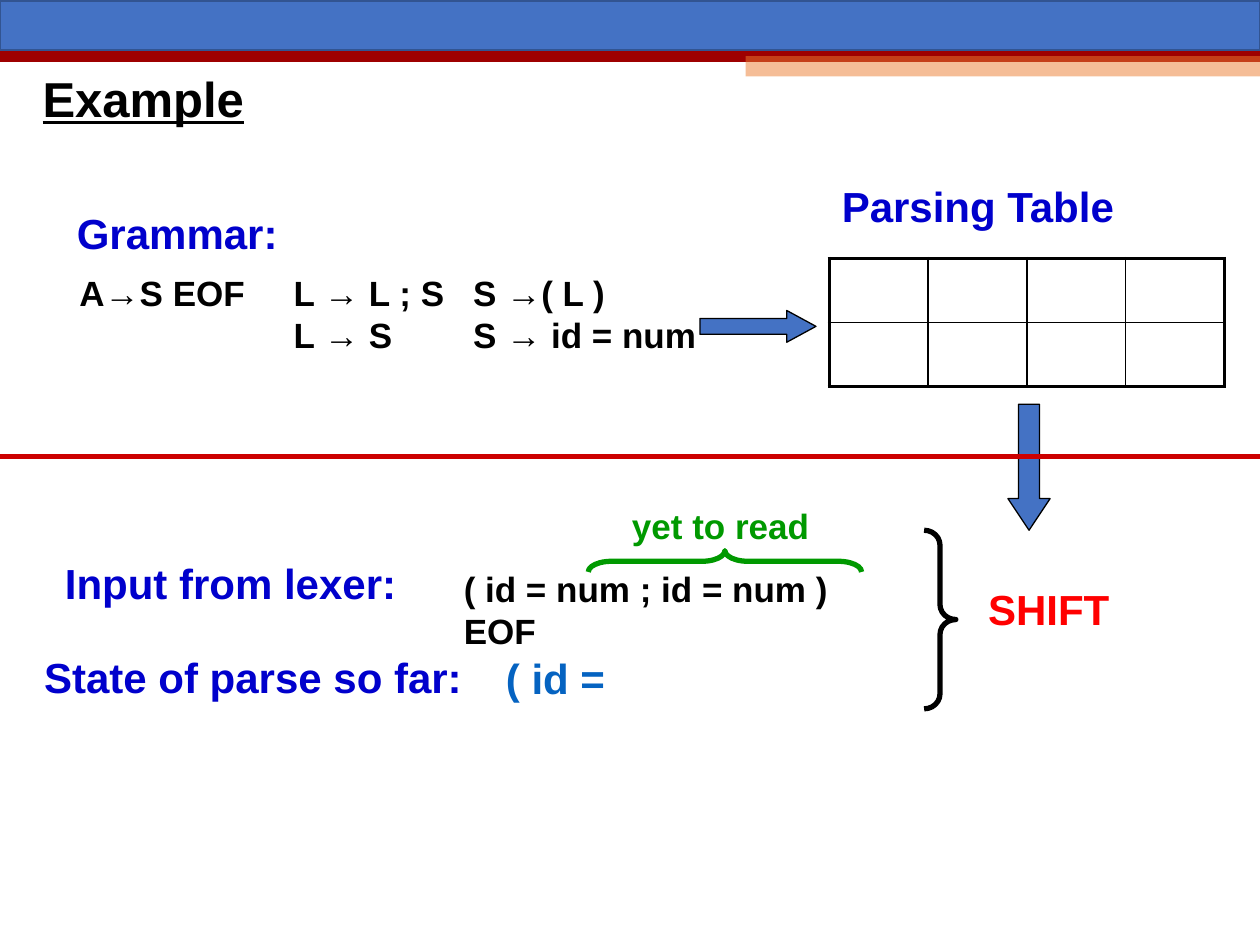
from dataclasses import dataclass

from lxml import etree
from pptx import Presentation
from pptx.dml.color import RGBColor
from pptx.enum.shapes import MSO_CONNECTOR, MSO_SHAPE
from pptx.enum.text import MSO_ANCHOR, MSO_AUTO_SIZE, PP_ALIGN
from pptx.oxml.ns import qn
from pptx.shapes.autoshape import Shape
from pptx.slide import Slide
from pptx.util import Cm, Pt

STRAIGHT = MSO_CONNECTOR.STRAIGHT
RECTANGLE = MSO_SHAPE.RECTANGLE
RIGHT_ARROW = MSO_SHAPE.RIGHT_ARROW
DOWN_ARROW = MSO_SHAPE.DOWN_ARROW
RIGHT_BRACE = MSO_SHAPE.RIGHT_BRACE
TOP = MSO_ANCHOR.TOP
MIDDLE = MSO_ANCHOR.MIDDLE
GROW = MSO_AUTO_SIZE.SHAPE_TO_FIT_TEXT
FIXED = MSO_AUTO_SIZE.NONE
LEFT = PP_ALIGN.LEFT


@dataclass(frozen=True)
class Theme:
    font: str = "Arial"
    title_size: int = 28
    heading_size: int = 24
    body_size: int = 20
    black: str = "000000"
    heading: str = "0000CC"
    parsed: str = "0563C1"
    unread: str = "009900"
    action: str = "FF0000"
    divider: str = "CC0000"
    band: str = "4472C4"
    band_edge: str = "325491"
    header_rule: str = "9E0000"
    accent: str = "ED7D31"


THEME = Theme()
SLIDE_WIDTH = 25.4
SLIDE_HEIGHT = 19.05


@dataclass(frozen=True)
class Box:
    left: float
    top: float
    width: float
    height: float

    def lengths(self) -> tuple[Cm, Cm, Cm, Cm]:
        return Cm(self.left), Cm(self.top), Cm(self.width), Cm(self.height)


@dataclass(frozen=True)
class Label:
    lines: tuple[str, ...]
    box: Box
    size: int = THEME.heading_size
    color: str = THEME.heading
    wrap: bool = False


@dataclass(frozen=True)
class Figure:
    kind: MSO_SHAPE
    box: Box
    fill: str | None = None
    line: str | None = None
    line_width: float = 0.75
    adjustments: tuple[float, ...] = ()
    rotation: float = 0


TITLE = Label(("Example",), Box(0.61, 1.14, 22.86, 1.8),
              THEME.title_size, THEME.black, True)

GRAMMAR_TOP = 5.34
LABELS = (
    Label(("A→S EOF",), Box(1.35, GRAMMAR_TOP, 3.89, 1.12), THEME.body_size, THEME.black),
    Label(("L → L ; S", "L → S"), Box(5.67, GRAMMAR_TOP, 3.56, 1.96),
          THEME.body_size, THEME.black),
    Label(("S →( L )", "S → id = num"), Box(9.29, GRAMMAR_TOP, 5.16, 1.96),
          THEME.body_size, THEME.black),
    Label(("Grammar:",), Box(1.3, 4.06, 4.57, 1.27)),
    Label(("Parsing Table",), Box(16.72, 3.52, 6.07, 1.27)),
    Label(("State of parse so far:",), Box(0.64, 13, 8.94, 1.27)),
    Label(("( id = num ; id = num ) EOF",), Box(9.1, 11.32, 8.8, 1.96),
          THEME.body_size, THEME.black, True),
    Label(("Input from lexer:",), Box(1.06, 11.11, 7.19, 1.27)),
    Label(("( id =",), Box(9.95, 13.03, 2.69, 1.27), color=THEME.parsed),
    Label(("yet to read",), Box(12.49, 10.05, 4.8, 1.09), THEME.body_size, THEME.unread, True),
    Label(("SHIFT",), Box(19.67, 11.63, 2.95, 1.27), color=THEME.action),
)

HEADER_BAND = Figure(RECTANGLE, Box(0, 0.02, SLIDE_WIDTH, 0.99),
                     THEME.band, THEME.band_edge, 1)
HEADER_ACCENT = Figure(RECTANGLE, Box(15.03, 1.13, 10.37, 0.41), THEME.accent)
FIGURES = (
    Figure(RIGHT_ARROW, Box(14.11, 6.26, 2.34, 0.64), THEME.band, THEME.black,
           adjustments=(0.5, 0.92)),
    Figure(RIGHT_BRACE, Box(14.4, 8.56, 0.43, 5.51), None, THEME.unread, 3,
           (1.08, 0.5), 270),
    Figure(RIGHT_BRACE, Box(18.63, 10.69, 0.64, 3.6), None, THEME.black, 3, (0.47, 0.5)),
    Figure(DOWN_ARROW, Box(20.32, 8.15, 0.85, 2.54), THEME.band, THEME.black,
           adjustments=(0.5, 0.75)),
)

TABLE_BOX = Box(16.72, 5.21, 7.96, 2.58)
TABLE_ROWS = 2
TABLE_COLUMNS = 4
OUTER_BORDER = 2.25
INNER_BORDER = 1


def draw_figure(slide: Slide, figure: Figure) -> Shape:
    shape = slide.shapes.add_shape(figure.kind, *figure.box.lengths())
    shape.shadow.inherit = False
    shape.rotation = figure.rotation
    for index, value in enumerate(figure.adjustments):
        shape.adjustments[index] = value
    if figure.fill:
        shape.fill.solid()
        shape.fill.fore_color.rgb = RGBColor.from_string(figure.fill)
    else:
        shape.fill.background()
    if figure.line:
        shape.line.color.rgb = RGBColor.from_string(figure.line)
        shape.line.width = Pt(figure.line_width)
    else:
        shape.line.fill.background()
    return shape


def set_opacity(shape: Shape, percent: int) -> None:
    color = shape._element.spPr.find(qn("a:solidFill"))[0]
    etree.SubElement(color, qn("a:alpha"), val=str(percent * 1000))


def draw_rule(slide: Slide, top: float, color: str, width: float) -> None:
    connector = slide.shapes.add_connector(
        STRAIGHT, Cm(0), Cm(top), Cm(SLIDE_WIDTH), Cm(top))
    connector.line.color.rgb = RGBColor.from_string(color)
    connector.line.width = Pt(width)
    etree.SubElement(connector._element.spPr, qn("a:effectLst"))


def draw_label(slide: Slide, label: Label, is_title: bool = False) -> None:
    shape = slide.shapes.add_textbox(*label.box.lengths())
    frame = shape.text_frame
    frame.word_wrap = label.wrap
    frame.auto_size = FIXED if is_title else GROW
    frame.vertical_anchor = MIDDLE if is_title else TOP
    for index, line in enumerate(label.lines):
        paragraph = frame.add_paragraph() if index else frame.paragraphs[0]
        paragraph.alignment = LEFT
        if is_title:
            paragraph.line_spacing = 0.9
        run = paragraph.add_run()
        run.text = line
        run.font.name = THEME.font
        run.font.size = Pt(label.size)
        run.font.bold = True
        run.font.underline = is_title
        run.font.color.rgb = RGBColor.from_string(label.color)


def draw_parsing_table(slide: Slide) -> None:
    table = slide.shapes.add_table(TABLE_ROWS, TABLE_COLUMNS, *TABLE_BOX.lengths()).table
    table.first_row = False
    table.horz_banding = False
    for row in range(TABLE_ROWS):
        for column in range(TABLE_COLUMNS):
            cell = table.cell(row, column)
            properties = cell._tc.get_or_add_tcPr()
            on_edge = {
                "a:lnL": column == 0,
                "a:lnR": column == TABLE_COLUMNS - 1,
                "a:lnT": row == 0,
                "a:lnB": row == TABLE_ROWS - 1,
            }
            for side, outer in on_edge.items():
                width = Pt(OUTER_BORDER if outer else INNER_BORDER)
                border = etree.SubElement(properties, qn(side), w=str(width))
                fill = etree.SubElement(border, qn("a:solidFill"))
                etree.SubElement(fill, qn("a:srgbClr"), val=THEME.black)
            cell.fill.background()


def main() -> None:
    presentation = Presentation()
    presentation.slide_width = Cm(SLIDE_WIDTH)
    presentation.slide_height = Cm(SLIDE_HEIGHT)
    slide = presentation.slides.add_slide(presentation.slide_layouts[6])
    draw_rule(slide, 1.12, THEME.header_rule, 7.5)
    set_opacity(draw_figure(slide, HEADER_ACCENT), 50)
    draw_figure(slide, HEADER_BAND)
    draw_parsing_table(slide)
    for label in LABELS:
        draw_label(slide, label)
    for figure in FIGURES:
        draw_figure(slide, figure)
    draw_rule(slide, 9.2, THEME.divider, 3)
    draw_label(slide, TITLE, is_title=True)
    presentation.save("out.pptx")


if __name__ == "__main__":
    main()
